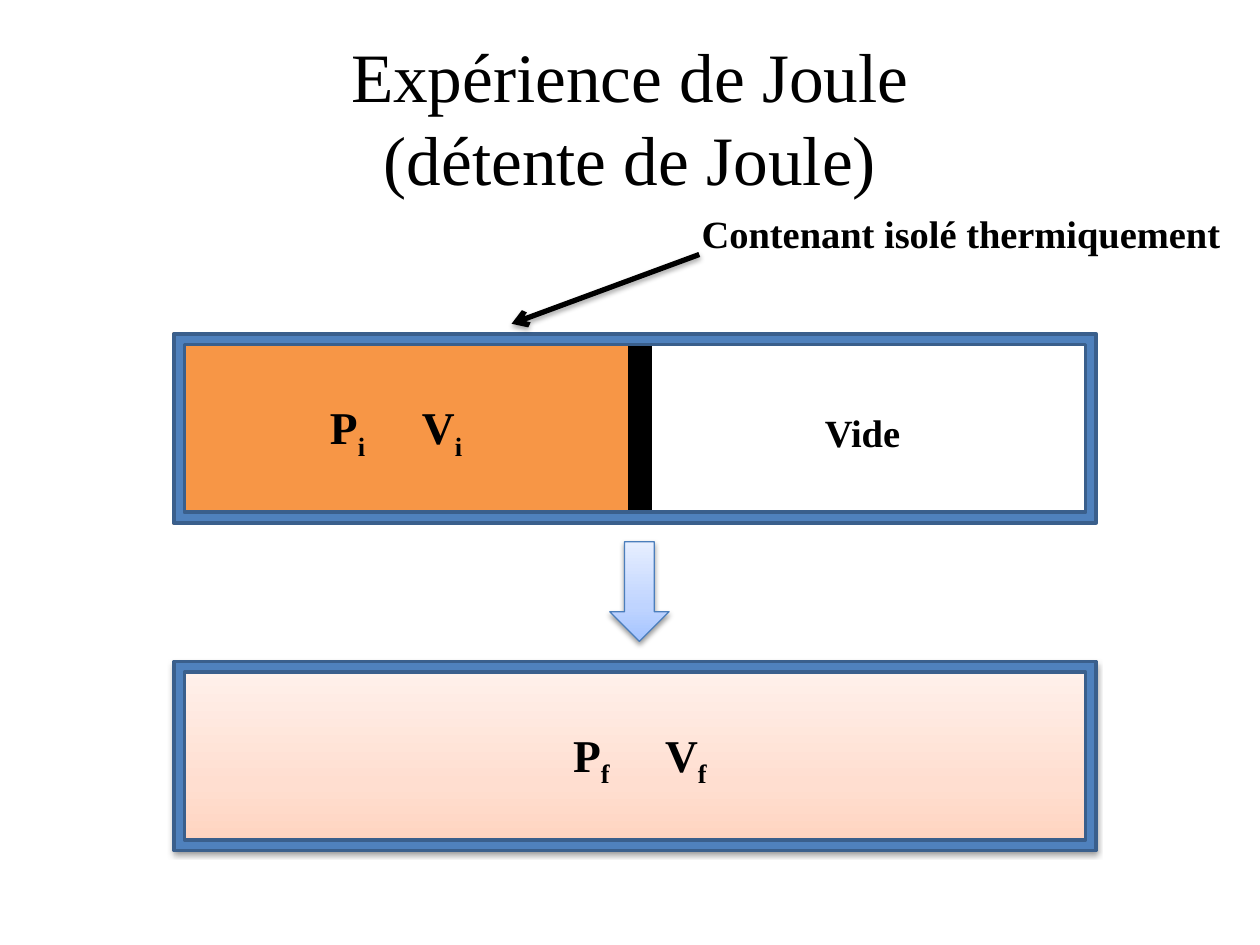
from lxml import etree
from pptx import Presentation
from pptx.dml.color import RGBColor
from pptx.enum import shapes, text
from pptx.oxml.ns import qn
from pptx.util import Inches, Pt

FONT = "Times New Roman"
BLACK = RGBColor(0x00, 0x00, 0x00)
ORANGE = RGBColor(0xF7, 0x96, 0x46)
ORANGE_EDGE = RGBColor(0xB7, 0x6F, 0x34)
PEACH_EDGE = RGBColor(0xF6, 0x92, 0x40)
BLUE = RGBColor(0x4F, 0x81, 0xBD)
BLUE_EDGE = RGBColor(0x3A, 0x5F, 0x8C)
ARROW_EDGE = RGBColor(0x4B, 0x7E, 0xBC)
# Gradient colours from bottom to top
PEACHES = [RGBColor(0xFF, 0xD2, 0xBD), RGBColor(0xFF, 0xDE, 0xD0), RGBColor(0xFF, 0xF2, 0xED)]
SKIES = [RGBColor(0xA4, 0xC4, 0xFF), RGBColor(0xBF, 0xD4, 0xFF), RGBColor(0xE6, 0xEE, 0xFF)]

BOX_LEFT, BOX_WIDTH, BOX_HEIGHT = 1.38, 7.32, 1.5
INITIAL_TOP, FINAL_TOP = 2.65, 5.25


def add_soft_shadow(properties, alpha, distance):
    """Put a black shadow below the shape that owns these properties."""
    effects = properties.find(qn("a:effectLst"))
    if effects is None:
        effects = etree.SubElement(properties, qn("a:effectLst"))
    shadow = etree.SubElement(effects, qn("a:outerShdw"), blurRad=str(Pt(3.1)),
                              dist=str(Pt(distance)), dir="5400000", rotWithShape="0")
    color = etree.SubElement(shadow, qn("a:srgbClr"), val=str(BLACK))
    etree.SubElement(color, qn("a:alpha"), val=str(alpha * 1000))


def add_text(paragraph, content, size, bold=True):
    run = paragraph.add_run()
    run.text = content
    run.font.name = FONT
    run.font.size = Pt(size)
    run.font.bold = bold
    run.font.color.rgb = BLACK
    return run


presentation = Presentation()
presentation.slide_width = Inches(10)
presentation.slide_height = Inches(7.5)
slide = presentation.slides.add_slide(presentation.slide_layouts[5])

# Title
title = slide.shapes.title
title.left, title.top = Inches(0.5), Inches(0.3)
title.width, title.height = Inches(9), Inches(1.25)
title.text_frame.auto_size = text.MSO_AUTO_SIZE.NONE
title.text_frame.vertical_anchor = text.MSO_ANCHOR.MIDDLE
paragraph = title.text_frame.paragraphs[0]
paragraph.alignment = text.PP_ALIGN.CENTER
paragraph.line_spacing = Pt(47.5)
add_text(paragraph, "Expérience de Joule", 39.6, bold=False)
paragraph.add_line_break()
add_text(paragraph, "(détente de Joule)", 39.6, bold=False)

# Containers, partition and downward arrow, from back to front
kinds = shapes.MSO_SHAPE
parts = [
    (kinds.RECTANGLE, BOX_LEFT, INITIAL_TOP, 3.62, BOX_HEIGHT, ORANGE, ORANGE_EDGE, 2),
    (kinds.RECTANGLE, 5, INITIAL_TOP, 0.16, BOX_HEIGHT, BLACK, BLACK, 2),
    (kinds.FRAME, BOX_LEFT, INITIAL_TOP, BOX_WIDTH, BOX_HEIGHT, BLUE, BLUE_EDGE, 2),
    (kinds.RECTANGLE, BOX_LEFT, FINAL_TOP, BOX_WIDTH, BOX_HEIGHT, PEACHES, PEACH_EDGE, 0.75),
    (kinds.FRAME, BOX_LEFT, FINAL_TOP, BOX_WIDTH, BOX_HEIGHT, BLUE, BLUE_EDGE, 2),
    (kinds.DOWN_ARROW, 4.84, 4.3, 0.47, 0.79, SKIES, ARROW_EDGE, 0.75),
]
for kind, left, top, width, height, fill, edge, edge_width in parts:
    shape = slide.shapes.add_shape(kind, Inches(left), Inches(top), Inches(width), Inches(height))
    shape.shadow.inherit = False
    shape.line.color.rgb = edge
    shape.line.width = Pt(edge_width)
    if kind == kinds.FRAME:
        shape.adjustments[0] = 0.056
    if isinstance(fill, list):
        shape.fill.gradient()
        shape.fill.gradient_angle = 90
        stops = shape._element.spPr.find(qn("a:gradFill")).find(qn("a:gsLst"))
        for stop in list(stops):
            stops.remove(stop)
        for position, color in zip((0, 35, 100), fill):
            stop = etree.SubElement(stops, qn("a:gs"), pos=str(position * 1000))
            etree.SubElement(stop, qn("a:srgbClr"), val=str(color))
        add_soft_shadow(shape._element.spPr, 38, 1.6)
    else:
        shape.fill.solid()
        shape.fill.fore_color.rgb = fill

# Pressure and volume of each state, the volume set at a tab stop
for left, top, state in [(2.52, 3.12, "i"), (4.45, 5.72, "f")]:
    box = slide.shapes.add_textbox(Inches(left), Inches(top), Inches(1.29), Inches(0.54))
    box.text_frame.word_wrap = True
    box.text_frame.margin_right = 0
    paragraph = box.text_frame.paragraphs[0]
    tabs = etree.SubElement(paragraph._p.get_or_add_pPr(), qn("a:tabLst"))
    etree.SubElement(tabs, qn("a:tab"), pos=str(Inches(0.73)), algn="l")
    for symbol in ("P", "\tV"):
        add_text(paragraph, symbol, 26)
        subscript = add_text(paragraph, state, 26)
        subscript.font._element.set("baseline", "-25000")

# Labels
labels = [
    ("Contenant isolé thermiquement", 5.47, 1.62, 4.35, False, text.PP_ALIGN.LEFT),
    ("Vide", 5.94, 3.2, 1.81, True, text.PP_ALIGN.CENTER),
]
for label, left, top, width, wrap, alignment in labels:
    box = slide.shapes.add_textbox(Inches(left), Inches(top), Inches(width), Inches(0.47))
    box.text_frame.word_wrap = wrap
    paragraph = box.text_frame.paragraphs[0]
    paragraph.alignment = alignment
    add_text(paragraph, label, 22)

# Pointer from the label to the container
pointer = slide.shapes.add_connector(shapes.MSO_CONNECTOR.STRAIGHT, Inches(5.55), Inches(2.02),
                                     Inches(4.06), Inches(2.57))
pointer.line.color.rgb = BLACK
pointer.line.width = Pt(3)
etree.SubElement(pointer.line._get_or_add_ln(), qn("a:tailEnd"), type="arrow")
add_soft_shadow(pointer._element.spPr, 35, 1.8)

presentation.save("out.pptx")
